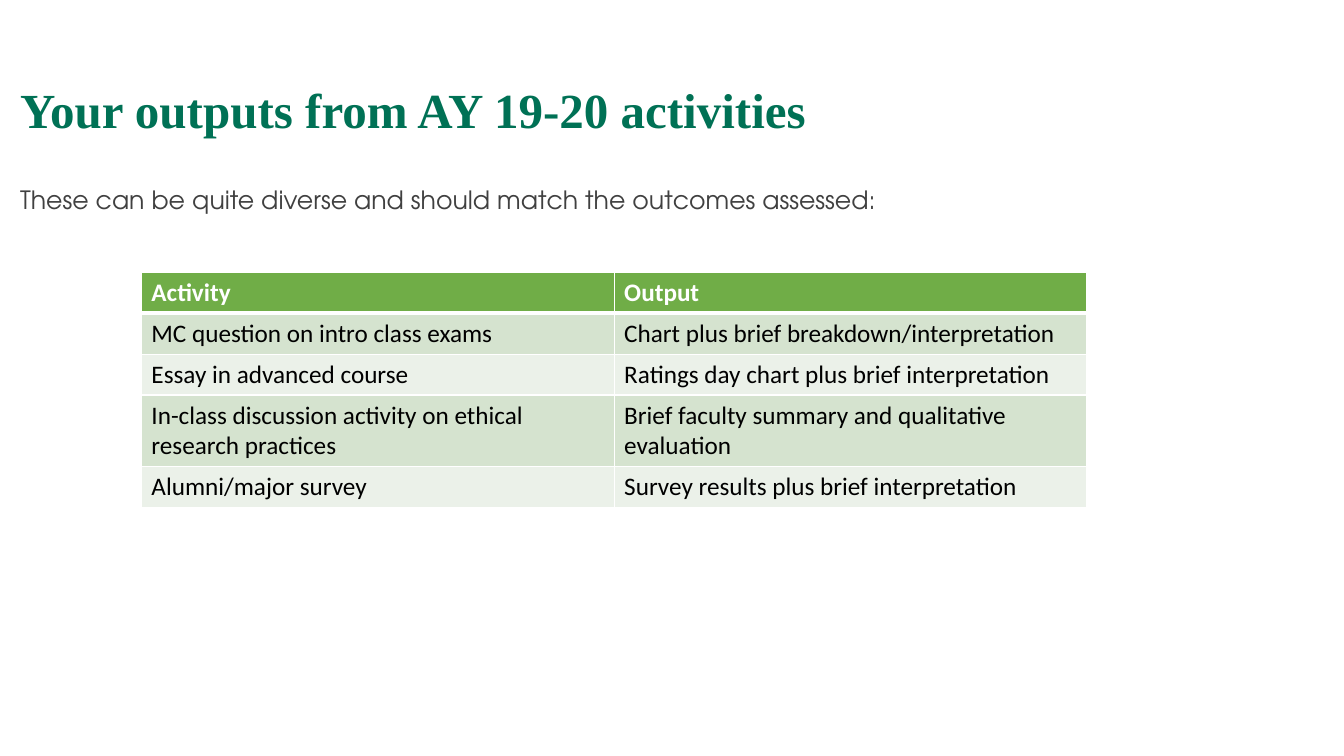
import pptx
import pptx.dml.color
import pptx.enum.text
import pptx.oxml.ns
import pptx.util
from lxml import etree

Pt = pptx.util.Pt
qn = pptx.oxml.ns.qn

COLORS = {
    "title": "007155",
    "body": "404040",
    "header": "70AD47",
    "odd_row": "D5E3CF",
    "even_row": "EBF1E9",
    "white": "FFFFFF",
    "black": "000000",
}
ROWS = [
    ("Activity", "Output"),
    ("MC question on intro class exams", "Chart plus brief breakdown/interpretation"),
    ("Essay in advanced course", "Ratings day chart plus brief interpretation"),
    ("In-class discussion activity on ethical research practices",
     "Brief faculty summary and qualitative evaluation"),
    ("Alumni/major survey", "Survey results plus brief interpretation"),
]
ROW_HEIGHTS = [29.2, 29.2, 29.2, 50.8, 29.2]


def rgb(name):
    return pptx.dml.color.RGBColor.from_string(COLORS[name])


def format_text(para, font, size, color, bold=False):
    for span in para.runs:
        span.font.name = font
        span.font.size = Pt(size)
        span.font.bold = bold
        span.font.color.rgb = rgb(color)


def fill_placeholder(shape, box, text, anchor, spacing):
    shape.left, shape.top, shape.width, shape.height = map(Pt, box)
    frame = shape.text_frame
    frame.text = text
    frame.word_wrap = True
    frame.auto_size = pptx.enum.text.MSO_AUTO_SIZE.NONE
    frame.vertical_anchor = anchor
    para = frame.paragraphs[0]
    para.alignment = pptx.enum.text.PP_ALIGN.LEFT
    para.line_spacing = spacing
    para.space_before = Pt(0)
    return para


def add_title(slide, box):
    para = fill_placeholder(slide.shapes.title, box,
                            "Your outputs from AY 19-20 activities",
                            pptx.enum.text.MSO_ANCHOR.MIDDLE, 0.9)
    format_text(para, "Times New Roman", 35, "title", True)


def add_body(slide, box):
    para = fill_placeholder(slide.placeholders[1], box,
                            "These can be quite diverse and should match the outcomes assessed:",
                            pptx.enum.text.MSO_ANCHOR.TOP, 1.5)
    properties = para._p.get_or_add_pPr()
    properties.set("marL", "0")
    properties.set("indent", "0")
    etree.SubElement(properties, qn("a:buNone"))
    para.space_after = Pt(4)
    format_text(para, "TeX Gyre Adventor", 18, "body")


def add_borders(cell, widths):
    properties = cell._tc.get_or_add_tcPr()
    for side, width in widths.items():
        line = etree.SubElement(properties, qn(f"a:ln{side}"), w=str(Pt(width)))
        fill = etree.SubElement(line, qn("a:solidFill"))
        etree.SubElement(fill, qn("a:srgbClr"), val=COLORS["white"])


def add_output_table(slide, box):
    left, top, width, height = box
    table = slide.shapes.add_table(len(ROWS), len(ROWS[0]), Pt(left), Pt(top),
                                   Pt(width), Pt(height)).table
    for row, texts in enumerate(ROWS):
        table.rows[row].height = Pt(ROW_HEIGHTS[row])
        header = row == 0
        fill = "header" if header else ("even_row", "odd_row")[row % 2]
        widths = {"L": 1, "R": 1, "T": 3 if row == 1 else 1, "B": 3 if header else 1}
        for column, text in enumerate(texts):
            cell = table.cell(row, column)
            cell.text_frame.text = text
            add_borders(cell, widths)
            cell.fill.solid()
            cell.fill.fore_color.rgb = rgb(fill)
            format_text(cell.text_frame.paragraphs[0], "Calibri", 18,
                        "white" if header else "black", header)


def main():
    deck = pptx.Presentation()
    deck.slide_width, deck.slide_height = Pt(960), Pt(540)
    slide = deck.slides.add_slide(deck.slide_layouts[1])
    add_title(slide, (7.2, 28, 828, 104.4))
    add_body(slide, (7.2, 117.4, 828, 229))
    add_output_table(slide, (101, 194.6, 675.4, sum(ROW_HEIGHTS)))
    deck.save("out.pptx")


if __name__ == "__main__":
    main()
